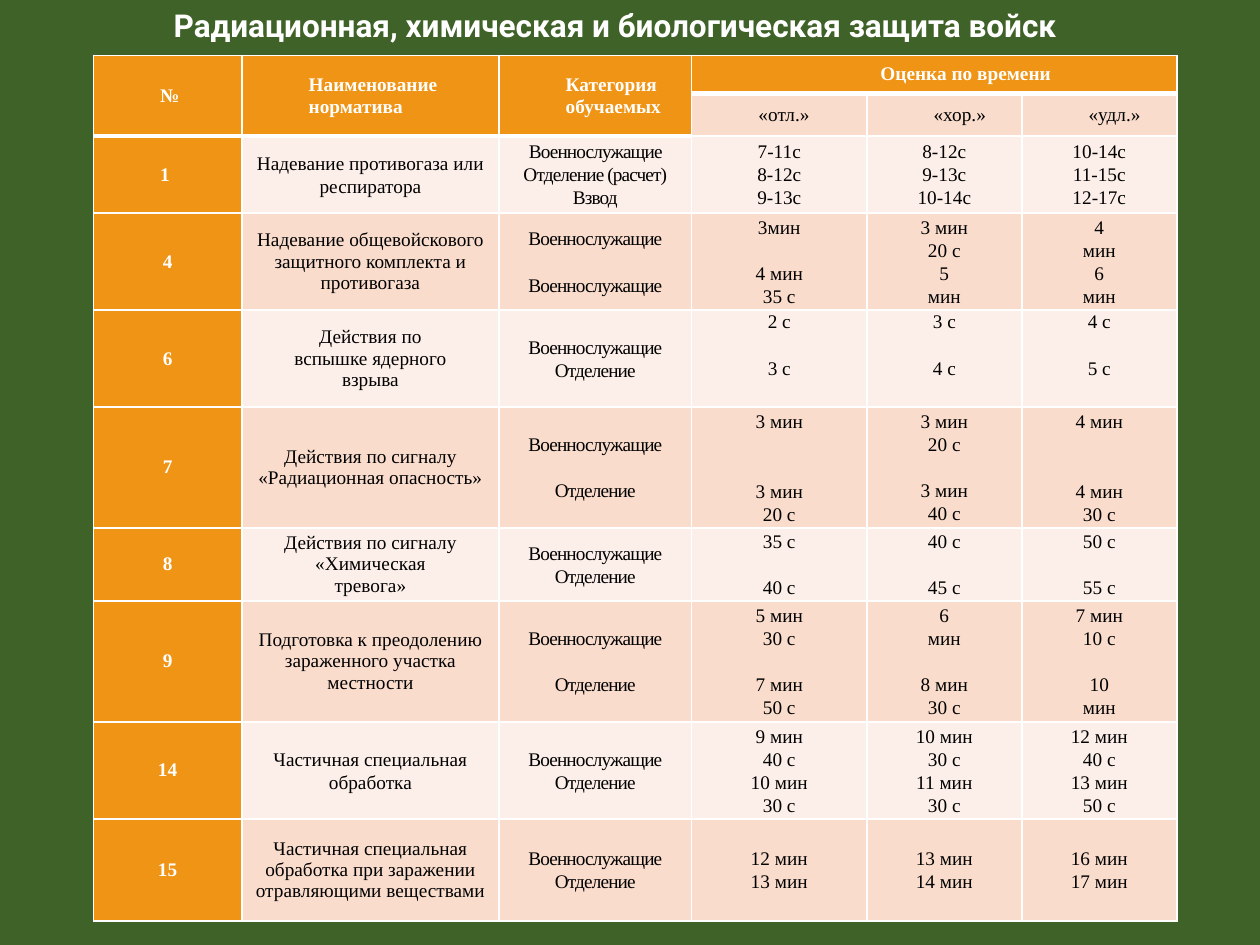
from lxml import etree
from pptx import Presentation
from pptx.dml.color import RGBColor
from pptx.enum.text import MSO_ANCHOR, MSO_AUTO_SIZE, PP_ALIGN
from pptx.oxml.ns import qn
from pptx.util import Inches, Pt

LEFT, CENTER = PP_ALIGN.LEFT, PP_ALIGN.CENTER
TOP, MIDDLE = MSO_ANCHOR.TOP, MSO_ANCHOR.MIDDLE
FIT_SHAPE = MSO_AUTO_SIZE.SHAPE_TO_FIT_TEXT

THEME = {
    "background": "3F6228", "accent": "F09415", "light": "FCEEE8", "dark": "F9DCCC",
    "white": "FFFFFF", "black": "000000",
    "title_font": "Roboto", "title_size": 18,
    "table_font": "Times New Roman", "table_size": 11,
    "blank_line": 13.5, "loose": 1.07, "tracking": "-50",
    "thin": 1, "thick": 3,
}

TITLE = "Радиационная, химическая и биологическая защита войск"
HEADINGS = ["№", "Наименование норматива", "Категория|обучаемых", "Оценка по времени"]
GRADES = ["«отл.»", "«хор.»", "«удл.»"]

# "|" starts a new paragraph; an empty part is a gap one line high
STANDARDS = [
    ("1", "Надевание противогаза или респиратора",
     "Военнослужащие Отделение (расчет)|Взвод",
     "7-11c|8-12c|9-13c", "8-12c|9-13c|10-14c", "10-14c|11-15c|12-17c"),
    ("4", "Надевание общевойскового защитного комплекта и противогаза",
     "Военнослужащие||Военнослужащие",
     "3мин||4 мин|35 с", "3 мин|20 с|5|мин", "4|мин|6|мин"),
    ("6", "Действия по|вспышке ядерного|взрыва", "Военнослужащие|Отделение",
     "2 с||3 с|", "3 с||4 с|", "4 с||5 с|"),
    ("7", "Действия по сигналу «Радиационная опасность»", "Военнослужащие||Отделение",
     "3 мин|||3 мин|20 с", "3 мин|20 с||3 мин|40 с", "4 мин|||4 мин|30 с"),
    ("8", "Действия по сигналу «Химическая|тревога»", "Военнослужащие|Отделение",
     "35 с||40 с", "40 с||45 с", "50 с||55 с"),
    ("9", "Подготовка к преодолению зараженного участка местности",
     "Военнослужащие||Отделение",
     "5 мин|30 с||7 мин|50 с", "6|мин||8 мин|30 с", "7 мин|10 с||10|мин"),
    ("14", "Частичная специальная обработка", "Военнослужащие|Отделение",
     "9 мин|40 с|10 мин|30 с", "10 мин|30 с|11 мин|30 с", "12 мин|40 с|13 мин|50 с"),
    ("15", "Частичная специальная обработка при заражении отравляющими веществами",
     "Военнослужащие|Отделение", "12 мин|13 мин", "13 мин|14 мин", "16 мин|17 мин"),
]
LOOSE_NAMES = {"1", "14"}
COLUMN_WIDTHS = [1.18, 2.04, 1.53, 1.39, 1.23, 1.23]
ROW_HEIGHTS = [0.3, 0.32, 0.61, 0.77, 0.77, 0.96, 0.58, 0.96, 0.77, 0.81]


def color(name):
    """Return the theme colour of that name."""
    return RGBColor.from_string(THEME[name])


def set_font(font, face, size, ink, bold):
    """Set the face, size, colour and weight of a font."""
    font.name, font.size, font.bold = face, Pt(size), bold
    font.color.rgb = color(ink)


def paint(cell, fill, bottom="thin"):
    """Give a cell its white borders, margins and fill."""
    properties = cell._tc.get_or_add_tcPr()
    for side, weight in (("L", "thin"), ("R", "thin"), ("T", "thin"), ("B", bottom)):
        line = etree.SubElement(properties, qn(f"a:ln{side}"), w=str(Pt(THEME[weight])))
        solid = etree.SubElement(line, qn("a:solidFill"))
        etree.SubElement(solid, qn("a:srgbClr"), val=THEME["white"])
    cell.margin_left = cell.margin_right = Inches(0.03)
    cell.margin_top = cell.margin_bottom = 0
    cell.fill.solid()
    cell.fill.fore_color.rgb = color(fill)


def write(cell, text, ink="black", bold=False, align=CENTER, indent=0, spacing=1, tight=False):
    """Write the parts of a text as paragraphs, turning empty parts into gaps."""
    cell.vertical_anchor = TOP if text.endswith("|") else MIDDLE
    frame, gap, started = cell.text_frame, 0, False
    for part in text.split("|"):
        if not part:
            gap += THEME["blank_line"]
            continue
        para = frame.add_paragraph() if started else frame.paragraphs[0]
        para.text, para.alignment, para.line_spacing = part, align, spacing
        if gap:
            para.space_before = Pt(gap)
        properties = para._p.get_or_add_pPr()
        if indent:
            properties.set("marL", str(Inches(indent)))
            properties.set("indent", "0")
        set_font(para.font, THEME["table_font"], THEME["table_size"], ink, bold)
        if tight:
            properties.get_or_add_defRPr().set("spc", THEME["tracking"])
        gap, started = 0, True


def add_title(slide):
    """Add the title line."""
    box = slide.shapes.add_textbox(Inches(1.28), 0, Inches(7.46), Inches(0.71))
    box.text_frame.word_wrap = False
    box.text_frame.auto_size = FIT_SHAPE
    para = box.text_frame.paragraphs[0]
    para.text = TITLE
    set_font(para.font, THEME["title_font"], THEME["title_size"], "white", True)


def fill_headings(table):
    """Fill the two heading rows."""
    for column in range(len(COLUMN_WIDTHS)):
        grade = column >= 3
        paint(table.cell(0, column), "accent", "thick")
        paint(table.cell(1, column), "dark" if grade else "accent", "thin" if grade else "thick")
    for column, heading in enumerate(HEADINGS):
        cell = table.cell(0, column)
        last = column == 3
        cell.merge(table.cell(0, 5) if last else table.cell(1, column))
        write(cell, heading, "white", True, CENTER if last else LEFT, 0.5)
    for column, grade in enumerate(GRADES, 3):
        write(table.cell(1, column), grade, align=LEFT, indent=0.5)


def fill_standards(table):
    """Fill one row for each standard."""
    for row, (number, name, category, *times) in enumerate(STANDARDS, 2):
        first = row == 2
        band = "dark" if row % 2 else "light"
        for column in range(len(COLUMN_WIDTHS)):
            paint(table.cell(row, column), band if column else "accent")
        write(table.cell(row, 0), number, "white", True,
              LEFT if first else CENTER, 0.5 if first else 0)
        write(table.cell(row, 1), name, spacing=THEME["loose"] if number in LOOSE_NAMES else 1)
        write(table.cell(row, 2), category, spacing=THEME["loose"], tight=True)
        for column, time in enumerate(times, 3):
            write(table.cell(row, column), time, spacing=THEME["loose"])


def main():
    """Build the deck and save it."""
    deck = Presentation()
    deck.slide_width, deck.slide_height = Inches(10), Inches(7.5)
    slide = deck.slides.add_slide(deck.slide_layouts[6])
    slide.background.fill.solid()
    slide.background.fill.fore_color.rgb = color("background")
    table = slide.shapes.add_table(
        len(ROW_HEIGHTS), len(COLUMN_WIDTHS), Inches(0.74), Inches(0.44),
        Inches(sum(COLUMN_WIDTHS)), Inches(sum(ROW_HEIGHTS))).table
    table.first_row = table.horz_banding = False
    for column, width in zip(table.columns, COLUMN_WIDTHS):
        column.width = Inches(width)
    for row, height in zip(table.rows, ROW_HEIGHTS):
        row.height = Inches(height)
    fill_headings(table)
    fill_standards(table)
    add_title(slide)
    deck.save("out.pptx")


if __name__ == "__main__":
    main()
